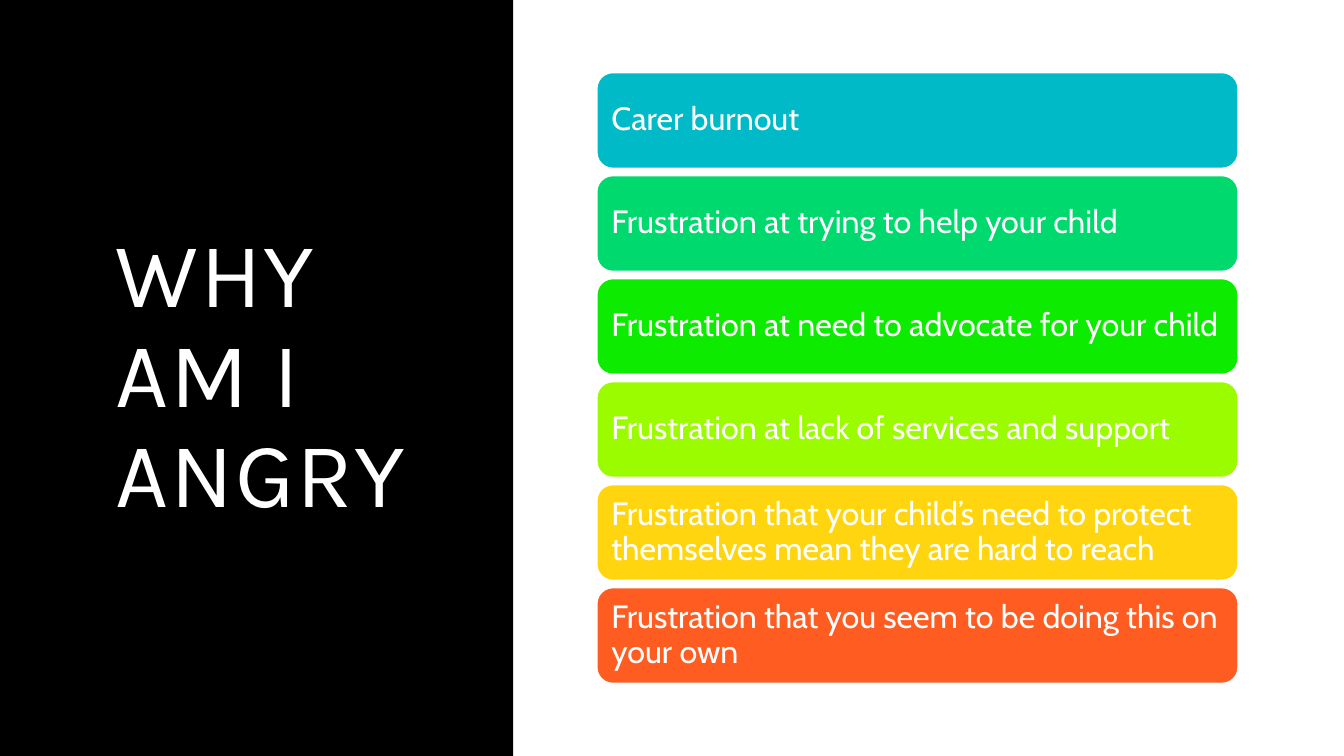
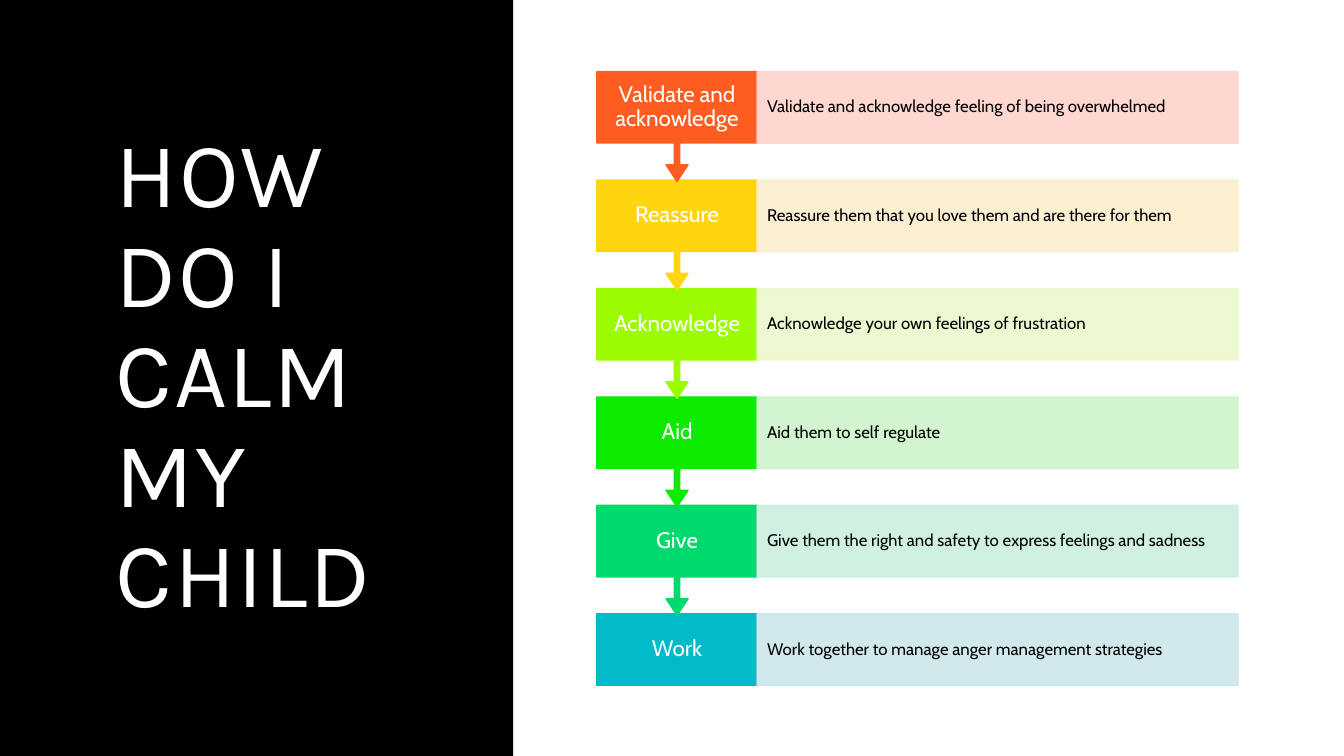
from lxml import etree
from pptx import Presentation
from pptx import util as u
from pptx.dml.color import RGBColor
from pptx.enum import shapes, text
from pptx.oxml.ns import qn

COLORS = {
    "black": "000000", "white": "FFFFFF",
    "teal": "00BAC7", "emerald": "00D96E", "green": "0DEB00",
    "lime": "9BFC00", "yellow": "FFD50F", "orange": "FF5C21",
    "pale teal": "CCE7EB", "pale emerald": "CBF0DF", "pale green": "CEF4CB",
    "pale lime": "EAF8CB", "pale yellow": "FCEECC", "pale orange": "FFD3CD",
}
TITLE = {"font": "Karla", "size": 66, "color": "white", "margins": (0.1, 0.05)}
REASON = {"font": "Cabin", "size": 23, "color": "white", "margins": (0.1, 0.1)}
STEP = {"font": "Cabin", "size": 16, "color": "white", "margins": (0.11, 0.12),
        "align": text.PP_ALIGN.CENTER}
ADVICE = {"font": "Cabin", "size": 12, "color": "black", "margins": (0.1, 0.17)}

REASONS = [
    ("teal", "Carer burnout"),
    ("emerald", "Frustration at trying to help your child"),
    ("green", "Frustration at need to advocate for your child"),
    ("lime", "Frustration at lack of services and support"),
    ("yellow", "Frustration that your child’s need to protect themselves "
               "mean they are hard to reach"),
    ("orange", "Frustration that you seem to be doing this on your own"),
]
STEPS = [
    ("orange", "Validate and acknowledge",
     "Validate and acknowledge feeling of being overwhelmed"),
    ("yellow", "Reassure", "Reassure them that you love them and are there for them"),
    ("lime", "Acknowledge", "Acknowledge your own feelings of frustration"),
    ("green", "Aid", "Aid them to self regulate"),
    ("emerald", "Give", "Give them the right and safety to express feelings and sadness"),
    ("teal", "Work", "Work together to manage anger management strategies"),
]


def rgb(name):
    """Return the named colour."""
    return RGBColor.from_string(COLORS[name])


def assign(target, values):
    """Set each attribute in values on the target."""
    for attribute, value in values.items():
        setattr(target, attribute, value)


def write(shape, words, style):
    """Put one styled paragraph in a shape."""
    frame = shape.text_frame
    frame.text = words
    across, down = map(u.Inches, style["margins"])
    assign(frame, {"word_wrap": True, "auto_size": text.MSO_AUTO_SIZE.NONE,
                   "vertical_anchor": text.MSO_ANCHOR.MIDDLE,
                   "margin_left": across, "margin_right": across,
                   "margin_top": down, "margin_bottom": down})
    paragraph = frame.paragraphs[0]
    assign(paragraph, {"alignment": style.get("align", text.PP_ALIGN.LEFT),
                       "line_spacing": 0.9})
    font = paragraph.runs[0].font
    assign(font, {"name": style["font"], "size": u.Pt(style["size"])})
    font.color.rgb = rgb(style["color"])


def add_block(slide, kind, box, fill, outline):
    """Add a filled preset shape with a thin outline."""
    block = slide.shapes.add_shape(kind, *map(u.Inches, box))
    block.shadow.inherit = False
    block.fill.solid()
    block.fill.fore_color.rgb = rgb(fill)
    block.line.color.rgb = rgb(outline)
    block.line.width = u.Pt(1)
    return block


def set_opacity(block, percent):
    """Make the fill and outline of a block translucent."""
    for color in block.element.spPr.iter(qn("a:srgbClr")):
        etree.SubElement(color, qn("a:alpha"), val=str(percent * 1000))


def add_titled_slide(deck, words):
    """Add a slide with its title on a black side panel."""
    slide = deck.slides.add_slide(deck.slide_layouts[5])
    title = slide.shapes.title
    panel = add_block(slide, shapes.MSO_SHAPE.RECTANGLE, (0, 0, 5.09, 7.5),
                      "black", "black")
    panel.line.fill.background()
    title.element.addprevious(panel.element)
    assign(title, {"left": u.Inches(1.05), "top": u.Inches(0.7),
                   "width": u.Inches(3.51), "height": u.Inches(6.09)})
    write(title, words, TITLE)
    title.text_frame.paragraphs[0].runs[0].font.element.set("spc", "120") if hasattr(
        title.text_frame.paragraphs[0].runs[0].font, "element") else next(
        title.element.iter(qn("a:rPr"))).set("spc", "120")
    return slide


def row_tops(first, last, count):
    """Return evenly spaced row tops."""
    return [first + (last - first) * row / (count - 1) for row in range(count)]


def add_reasons(slide):
    """Stack the reasons as rounded bars."""
    for top, (color, reason) in zip(row_tops(0.72, 5.83, len(REASONS)), REASONS):
        bar = add_block(slide, shapes.MSO_SHAPE.ROUNDED_RECTANGLE,
                        (5.92, top, 6.36, 0.95), color, "white")
        write(bar, reason, REASON)


def add_step(slide, top, color, step, advice, is_last):
    """Add one step with its advice and, unless last, an arrow down."""
    if is_last:
        label = add_block(slide, shapes.MSO_SHAPE.RECTANGLE,
                          (5.92, top, 1.59, 0.71), color, color)
    else:
        label = add_block(slide, shapes.MSO_SHAPE.DOWN_ARROW_CALLOUT,
                          (5.92, top, 1.59, 1.09), color, color)
        for index, value in enumerate((0.05, 0.1, 0.15, 0.65)):
            label.adjustments[index] = value
    write(label, step, STEP)
    pale = f"pale {color}"
    band = add_block(slide, shapes.MSO_SHAPE.RECTANGLE,
                     (7.51, top, 4.77, 0.71), pale, pale)
    set_opacity(band, 90)
    write(band, advice, ADVICE)


def add_steps(slide):
    """Chain the steps, lowest first so that arrows overlap the next step."""
    rows = list(zip(row_tops(0.71, 6.09, len(STEPS)), STEPS))
    for top, step in reversed(rows):
        add_step(slide, top, *step, is_last=step is STEPS[-1])


def main():
    """Build and save the deck."""
    deck = Presentation()
    assign(deck, {"slide_width": u.Inches(13.33), "slide_height": u.Inches(7.5)})
    add_reasons(add_titled_slide(deck, "WHY AM I ANGRY"))
    add_steps(add_titled_slide(deck, "HOW DO I CALM MY CHILD"))
    deck.save("out.pptx")


if __name__ == "__main__":
    main()
